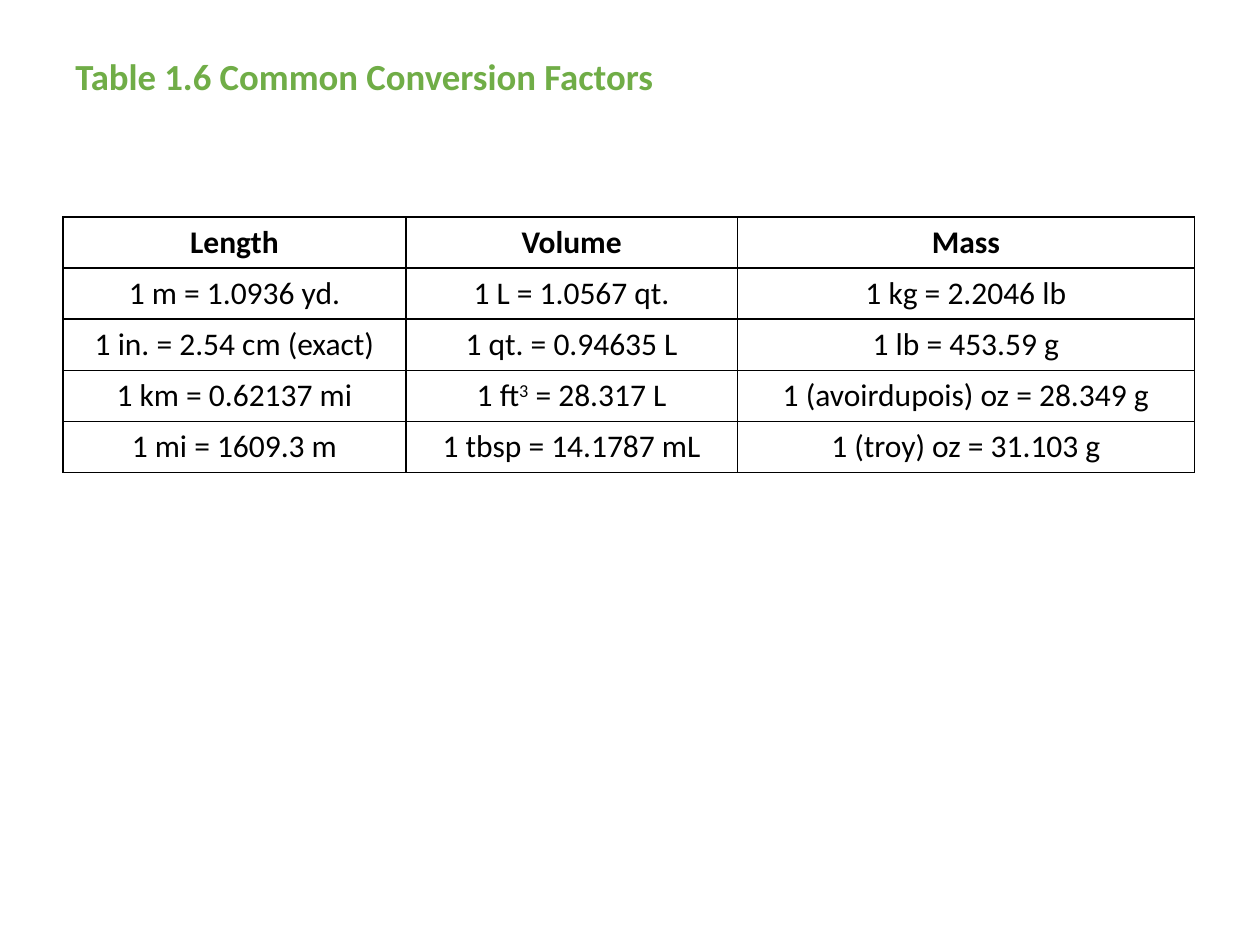
from lxml import etree
from pptx import Presentation
from pptx.dml.color import RGBColor
from pptx.enum.text import MSO_ANCHOR, PP_ALIGN
from pptx.oxml.ns import qn
from pptx.util import Pt

MIDDLE = MSO_ANCHOR.MIDDLE
CENTER = PP_ALIGN.CENTER
BLANK_LAYOUT = 6
CONVERSIONS = [
    ["Length", "Volume", "Mass"],
    ["1 m = 1.0936 yd.", "1 L = 1.0567 qt.", "1 kg = 2.2046 lb"],
    ["1 in. = 2.54 cm (exact)", "1 qt. = 0.94635 L", "1 lb = 453.59 g"],
    ["1 km = 0.62137 mi", "1 ft^3^ = 28.317 L", "1 (avoirdupois) oz = 28.349 g"],
    ["1 mi = 1609.3 m", "1 tbsp = 14.1787 mL", "1 (troy) oz = 31.103 g"],
]


def color(value):
    return RGBColor.from_string(value)


class SlideWriter:
    """Holds the style and the current slide, and adds elements to it."""

    font_name = "Calibri"
    accent = "70AD47"
    ink = "000000"
    border_width = 1

    def __init__(self, slide):
        self.slide = slide

    def style(self, paragraph, size, ink, bold):
        font = paragraph.font
        font.name = self.font_name
        font.size = Pt(size)
        font.bold = bold
        font.color.rgb = color(ink)

    def title(self, text, left, top, width, height):
        frame = self.slide.shapes.add_textbox(
            Pt(left), Pt(top), Pt(width), Pt(height)).text_frame
        frame.word_wrap = True
        frame.vertical_anchor = MIDDLE
        heading = frame.paragraphs[0]
        heading.text = text
        heading.line_spacing = 0.9
        self.style(heading, 21, self.accent, True)

    def table(self, rows, left, top, widths, row_height):
        grid = self.slide.shapes.add_table(
            len(rows), len(widths), Pt(left), Pt(top),
            Pt(sum(widths)), Pt(row_height * len(rows))).table
        for column, width in zip(grid.columns, widths):
            column.width = Pt(width)
        for row_index, row in enumerate(rows):
            grid.rows[row_index].height = Pt(row_height)
            for column_index, text in enumerate(row):
                self.cell(grid.cell(row_index, column_index), text, row_index == 0)

    def cell(self, cell, text, bold):
        self.borders(cell)
        cell.fill.background()
        entry = cell.text_frame.paragraphs[0]
        entry.alignment = CENTER
        for index, part in enumerate(text.split("^")):
            run = entry.add_run()
            run.text = part
            if index % 2:
                run._r.get_or_add_rPr().set("baseline", "30000")
        self.style(entry, 18, self.ink, bold)

    def borders(self, cell):
        properties = cell._tc.get_or_add_tcPr()
        for side in ("a:lnL", "a:lnR", "a:lnT", "a:lnB"):
            line = etree.SubElement(properties, qn(side), w=str(Pt(self.border_width)))
            fill = etree.SubElement(line, qn("a:solidFill"))
            etree.SubElement(fill, qn("a:srgbClr"), val=self.ink)


def main():
    presentation = Presentation()
    presentation.slide_width = Pt(720)
    presentation.slide_height = Pt(540)
    layout = presentation.slide_layouts[BLANK_LAYOUT]
    writer = SlideWriter(presentation.slides.add_slide(layout))
    writer.title("Table 1.6 Common Conversion Factors", 36, 18.7, 635, 52)
    writer.table(CONVERSIONS, 36, 124, [196, 189.3, 261.3], 29.2)
    presentation.save("out.pptx")


if __name__ == "__main__":
    main()
